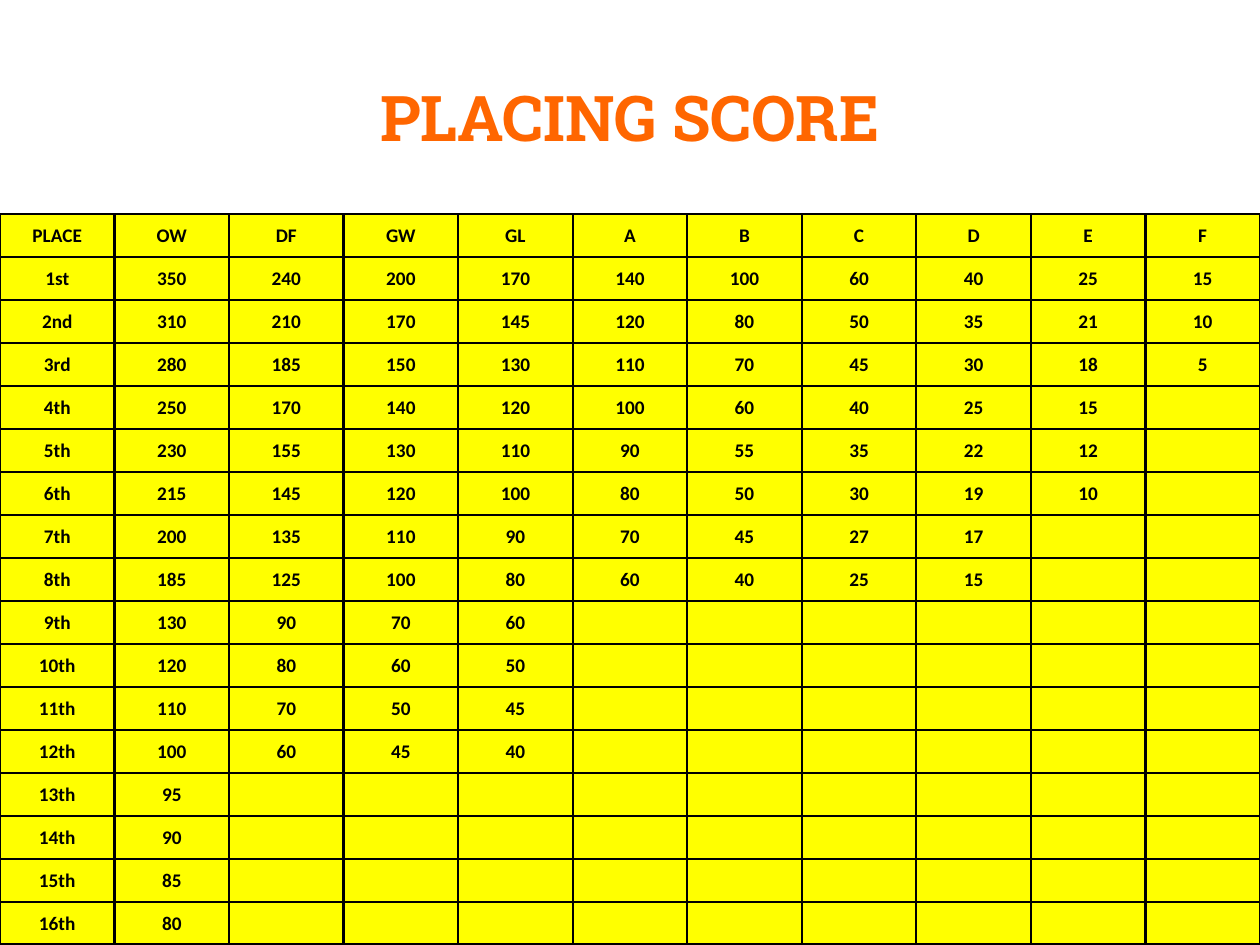
from lxml.etree import SubElement as Sub
from pptx import Presentation
from pptx.dml.color import RGBColor
from pptx.enum.text import MSO_ANCHOR as Anchor, PP_ALIGN as Align
from pptx.oxml.ns import qn
from pptx.util import Cm, Pt

# Content
TITLE = "PLACING SCORE"
HEADS = ["PLACE", "OW", "DF", "GW", "GL", "A", "B", "C", "D", "E", "F"]
SCORES = [
    ("1st", 350, 240, 200, 170, 140, 100, 60, 40, 25, 15),
    ("2nd", 310, 210, 170, 145, 120, 80, 50, 35, 21, 10),
    ("3rd", 280, 185, 150, 130, 110, 70, 45, 30, 18, 5),
    ("4th", 250, 170, 140, 120, 100, 60, 40, 25, 15),
    ("5th", 230, 155, 130, 110, 90, 55, 35, 22, 12),
    ("6th", 215, 145, 120, 100, 80, 50, 30, 19, 10),
    ("7th", 200, 135, 110, 90, 70, 45, 27, 17),
    ("8th", 185, 125, 100, 80, 60, 40, 25, 15),
    ("9th", 130, 90, 70, 60),
    ("10th", 120, 80, 60, 50),
    ("11th", 110, 70, 50, 45),
    ("12th", 100, 60, 45, 40),
    ("13th", 95),
    ("14th", 90),
    ("15th", 85),
    ("16th", 80),
]
ORANGE, YELLOW, BLACK = "FF6600", "FFFF00", "000000"
WIDE, HIGH, TOP = Cm(25.4), Cm(19.05), Cm(4.32)


def tint(fmt, color):
    fmt.rgb = RGBColor.from_string(color)


def write(frame, text, font, size, color):
    frame.text = text
    para = frame.paragraphs[0]
    para.alignment = Align.CENTER
    for run in para.runs:
        run.font.name, run.font.size, run.font.bold = font, Pt(size), True
        tint(run.font.color, color)


def border(cell, color, width):
    props = cell._tc.get_or_add_tcPr()
    for side in ("a:lnL", "a:lnR", "a:lnT", "a:lnB"):
        line = Sub(props, qn(side), w=str(Pt(width)))
        Sub(Sub(line, qn("a:solidFill")), qn("a:srgbClr"), val=color)


deck = Presentation()
deck.slide_width, deck.slide_height = WIDE, HIGH
slide = deck.slides.add_slide(deck.slide_layouts[6])

# Title
box = slide.shapes.add_textbox(Cm(1.27), Cm(0.76), Cm(22.86), Cm(3.18))
box.text_frame.word_wrap = True
box.text_frame.vertical_anchor = Anchor.MIDDLE
write(box.text_frame, TITLE, "Roboto Slab", 36, ORANGE)

# Score table, filling the slide below the title
rows = [HEADS, *SCORES]
table = slide.shapes.add_table(
    len(rows), len(HEADS), 0, TOP, WIDE, HIGH - TOP).table
for r, row in enumerate(rows):
    for c in range(len(HEADS)):
        cell = table.cell(r, c)
        cell.margin_left = cell.margin_right = cell.margin_top = Cm(0.02)
        cell.margin_bottom = 0
        cell.vertical_anchor = Anchor.MIDDLE
        border(cell, BLACK, 1.5)
        cell.fill.solid()
        tint(cell.fill.fore_color, YELLOW)
        if c < len(row):
            write(cell.text_frame, str(row[c]), "Calibri", 11, BLACK)

deck.save("out.pptx")
